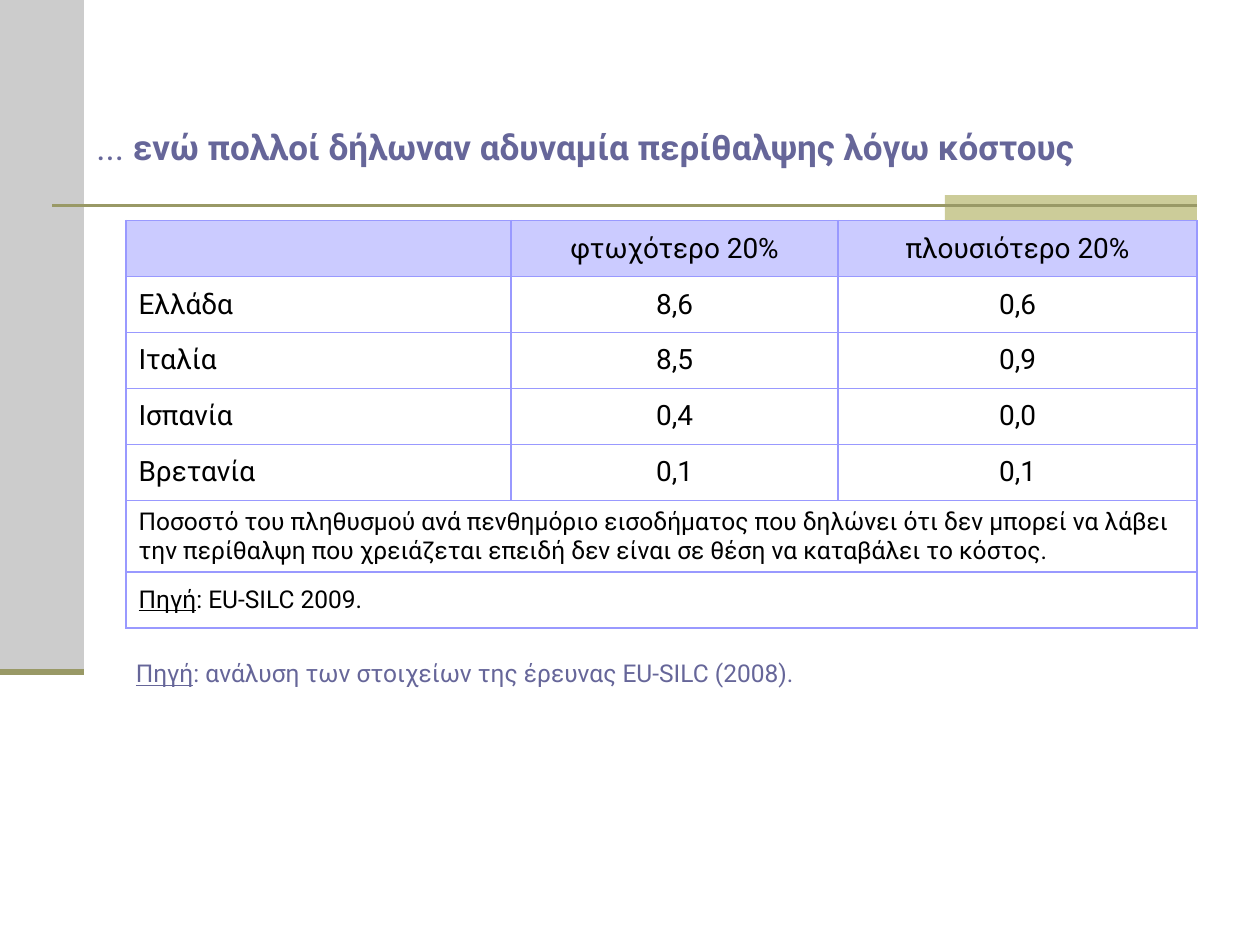
from lxml import etree
from pptx import Presentation
from pptx.dml.color import RGBColor
from pptx.enum.shapes import MSO_CONNECTOR, MSO_SHAPE
from pptx.enum.text import MSO_ANCHOR, PP_ALIGN
from pptx.oxml.ns import qn
from pptx.util import Pt

RECT, LINE = MSO_SHAPE.RECTANGLE, MSO_CONNECTOR.STRAIGHT
MIDDLE, BOTTOM = MSO_ANCHOR.MIDDLE, MSO_ANCHOR.BOTTOM
LEFT, CENTER = PP_ALIGN.LEFT, PP_ALIGN.CENTER

THEME = {
    "font": "Roboto",
    "title": 20, "body": 16, "note": 14,
    "ink": "000000", "head": "666699", "olive": "999966", "sand": "CCCC99",
    "side": "CCCCCC", "grid": "9999FF", "paper": "FFFFFF",
}

# A run is its text and the format values that differ from plain.
TITLE = [("...", {}),
         (" ενώ πολλοί δήλωναν αδυναμία περίθαλψης λόγω κόστους", {"bold": True})]
SOURCE = [("Πηγή", {"underline": True}),
          (": ανάλυση των στοιχείων της έρευνας EU-SILC (2008).", {})]
ROWS = [
    ("", "φτωχότερο 20%", "πλουσιότερο 20%"),
    ("Ελλάδα", "8,6", "0,6"),
    ("Ιταλία", "8,5", "0,9"),
    ("Ισπανία", "0,4", "0,0"),
    ("Βρετανία", "0,1", "0,1"),
]
NOTES = [
    [("Ποσοστό του πληθυσμού ανά πενθημόριο εισοδήματος που δηλώνει ότι δεν "
      "μπορεί να λάβει την περίθαλψη που χρειάζεται επειδή δεν είναι σε θέση "
      "να καταβάλει το κόστος.", {})],
    [("Πηγή", {"underline": True}), (": EU-SILC 2009.", {})],
]
COLS = [220, 187, 205]
HIGH = [32] * len(ROWS) + [41, 32]

BLOCKS = [("side", (0, 0, 48, 384)), ("sand", (540, 111.5, 144, 14.5))]
RULES = [((30, 117.5, 684, 117.5), 1.5), ((0, 384, 48, 384), 3.5)]
TEXTS = [(TITLE, (48, 26, 630, 73), "title"),
         (SOURCE, (70.5, 359, 630, 37.5), "note")]


def color(name):
    return RGBColor.from_string(THEME[name])


def pts(nums):
    return [Pt(n) for n in nums]


def write(frame, runs, size, ink, align=LEFT):
    para = frame.paragraphs[0]
    para.alignment = align
    for text, extra in runs:
        run = para.add_run()
        run.text = text
        look = {"name": THEME["font"], "size": Pt(THEME[size]), **extra}
        for key, value in look.items():
            setattr(run.font, key, value)
        run.font.color.rgb = color(ink)


def block(shapes, name, box):
    shape = shapes.add_shape(RECT, *pts(box))
    shape.shadow.inherit = False
    shape.fill.solid()
    shape.fill.fore_color.rgb = color(name)
    shape.line.fill.background()


def rule(shapes, ends, width):
    line = shapes.add_connector(LINE, *pts(ends))
    line.line.color.rgb = color("olive")
    line.line.width = Pt(width)
    etree.SubElement(line._element.spPr, qn("a:effectLst"))


def label(shapes, runs, box, size):
    frame = shapes.add_textbox(*pts(box)).text_frame
    frame.word_wrap = True
    frame.vertical_anchor = BOTTOM
    write(frame, runs, size, "head")


def dress(cell, head):
    """Give a cell its four borders and its fill; the head row is half clear."""
    props = cell._tc.get_or_add_tcPr()
    for side in ("lnL", "lnR", "lnT", "lnB"):
        edge = etree.SubElement(props, qn("a:" + side), w=str(Pt(1)))
        fill = etree.SubElement(edge, qn("a:solidFill"))
        etree.SubElement(fill, qn("a:srgbClr"), val=THEME["grid"])
    cell.fill.solid()
    cell.fill.fore_color.rgb = color("grid" if head else "paper")
    if head:
        tint = props.find(qn("a:solidFill")).find(qn("a:srgbClr"))
        etree.SubElement(tint, qn("a:alpha"), val="50000")
    cell.vertical_anchor = MIDDLE


def grid(shapes):
    box = (72, 126, sum(COLS), sum(HIGH))
    table = shapes.add_table(len(HIGH), len(COLS), *pts(box)).table
    for col, width in zip(table.columns, COLS):
        col.width = Pt(width)
    for r, high in enumerate(HIGH):
        table.rows[r].height = Pt(high)
        for c in range(len(COLS)):
            dress(table.cell(r, c), r == 0)
    for r, row in enumerate(ROWS):
        for c, text in enumerate(row):
            if text:
                write(table.cell(r, c).text_frame, [(text, {})], "body", "ink",
                      CENTER if c else LEFT)
    for r, runs in enumerate(NOTES, len(ROWS)):
        first = table.cell(r, 0)
        first.merge(table.cell(r, len(COLS) - 1))
        write(first.text_frame, runs, "note", "ink")


def main():
    deck = Presentation()
    deck.slide_width, deck.slide_height = Pt(720), Pt(540)
    shapes = deck.slides.add_slide(deck.slide_layouts[6]).shapes
    for name, box in BLOCKS:
        block(shapes, name, box)
    for ends, width in RULES:
        rule(shapes, ends, width)
    for runs, box, size in TEXTS:
        label(shapes, runs, box, size)
    grid(shapes)
    deck.save("out.pptx")


if __name__ == "__main__":
    main()
